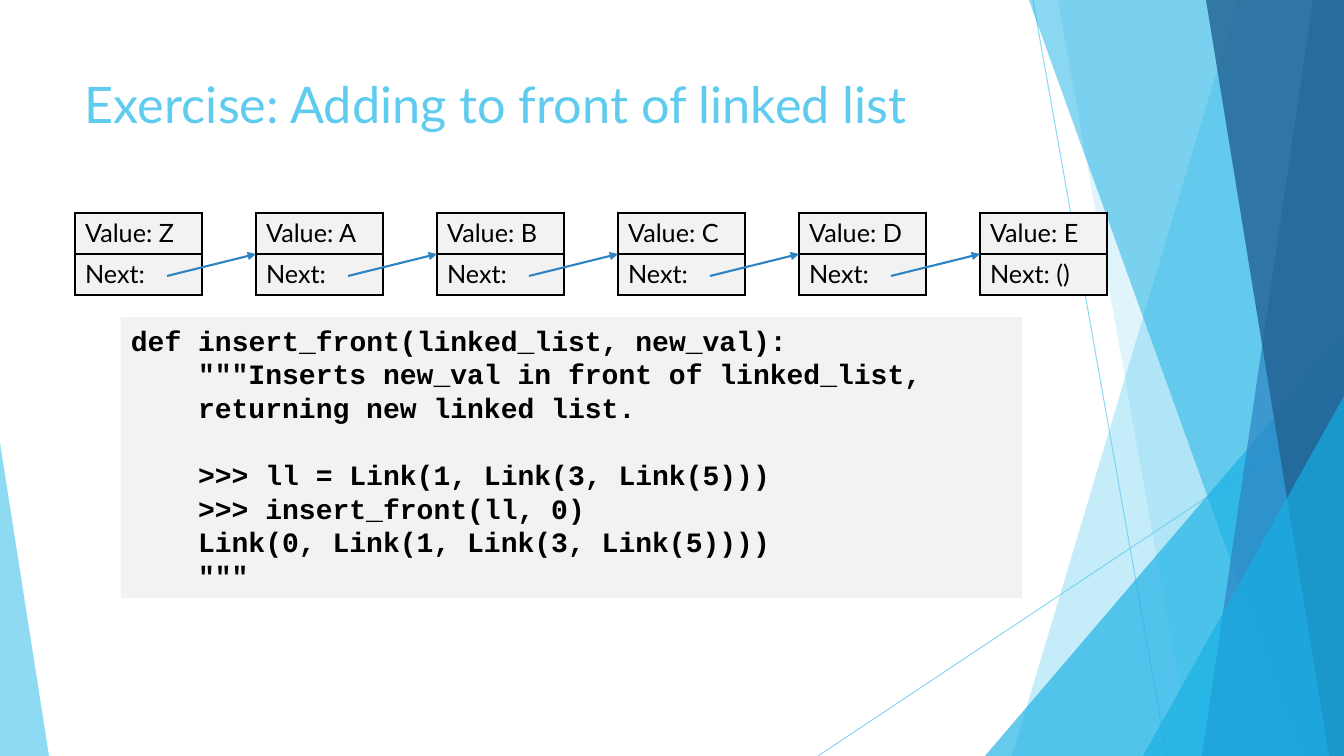
from lxml.etree import SubElement
from pptx import Presentation
from pptx.dml.color import RGBColor
from pptx.enum.shapes import MSO_CONNECTOR, MSO_SHAPE
from pptx.enum.text import MSO_ANCHOR, PP_ALIGN
from pptx.oxml.ns import qn
from pptx.util import Pt

WIDE, HIGH = 1344, 756
SCALE = 12192000 / WIDE
SKY, CYAN, BLUE, NAVY = "5FCBEF", "17B0E4", "2E83C3", "226292"
GRAY, BLACK = "F2F2F2", "000000"

NODES = "ZABCDE"
LEFT, TOP, STEP = 75, 213, 181
CELL_W, CELL_H = 127, 41

# Code lines: text, indented, gap before in points
CODE = [
    ("def insert_front(linked_list, new_val):", False, 0),
    ('"""Inserts new_val in front of linked_list,', True, 0),
    ("returning new linked list.", True, 0),
    (">>> ll = Link(1, Link(3, Link(5)))", True, 24),
    (">>> insert_front(ll, 0)", True, 0),
    ("Link(0, Link(1, Link(3, Link(5))))", True, 0),
    ('"""', True, 0),
]


def px(*sizes):
    """Turn pixel lengths into EMU."""
    return [round(size * SCALE) for size in sizes]


def paint(part, color):
    """Give a fill or a font one solid colour."""
    if hasattr(part, "solid"):
        part.solid()
        part = part.fore_color
    else:
        part = part.color
    part.rgb = RGBColor.from_string(color)


def fade(props, alpha):
    """Set the opacity, in percent, of the first colour in props."""
    color = next(props.iter(qn("a:srgbClr")))
    SubElement(color, qn("a:alpha"), val=str(alpha * 1000))


def style(para, name, size, color, bold=False):
    font = para.font
    font.name, font.size, font.bold = name, Pt(size), bold
    paint(font, color)


def finish(shape, color, alpha=100):
    """Leave a shape with a plain fill, no line and no shadow."""
    shape.shadow.inherit = False
    shape.line.fill.background()
    paint(shape.fill, color)
    if alpha < 100:
        fade(shape._element.spPr, alpha)


def line(shapes, start, end, color, width, alpha=100, arrow=False):
    link = shapes.add_connector(MSO_CONNECTOR.STRAIGHT, *px(*start, *end))
    link.line.width = Pt(width)
    paint(link.line.fill, color)
    props = link._element.spPr
    if alpha < 100:
        fade(props, alpha)
    if arrow:
        SubElement(props.find(qn("a:ln")), qn("a:tailEnd"), type="triangle")
    SubElement(props, qn("a:effectLst"))


def band(shapes, top, base, color, alpha):
    """Fill from a slanted edge (top x, base x) to the right of the slide."""
    pen = shapes.build_freeform(top, 0, scale=SCALE)
    pen.add_line_segments([(WIDE, 0), (WIDE, HIGH), (base, HIGH)])
    finish(pen.convert_to_shape(), color, alpha)


def wedge(shapes, left, top, width, peak, color, alpha):
    """Stand a triangle on the foot of the slide; peak is 0 left, 1 right."""
    box = px(left, top, width, HIGH - top)
    shape = shapes.add_shape(MSO_SHAPE.ISOSCELES_TRIANGLE, *box)
    shape.adjustments[0] = peak
    finish(shape, color, alpha)


def decor(shapes):
    line(shapes, (1033, 0), (1167, HIGH), SKY, 0.75, 70)
    line(shapes, (WIDE, 406), (818, HIGH), SKY, 0.75, 70)
    band(shapes, 1238, 1012, SKY, 36)
    band(shapes, 1058, 1192, SKY, 20)
    wedge(shapes, 985, 336, 359, 1, CYAN, 66)
    band(shapes, 1029, 1301, CYAN, 50)
    band(shapes, 1313, 1202, BLUE, 70)
    band(shapes, 1206, 1329, NAVY, 80)
    wedge(shapes, 1143, 396, 201, 1, CYAN, 66)
    wedge(shapes, 0, 443, 49, 0, SKY, 70)


def title(shapes, text):
    frame = shapes.add_textbox(*px(75, 68, 948, 145)).text_frame
    frame.word_wrap = True
    para = frame.paragraphs[0]
    para.text = text
    style(para, "Lato", 36, SKY)


def border(cell):
    """Draw all four sides of a cell, ahead of its fill."""
    props = cell._tc.get_or_add_tcPr()
    for side in ("a:lnL", "a:lnR", "a:lnT", "a:lnB"):
        edge = SubElement(props, qn(side), w=str(Pt(1.5)))
        fill = SubElement(edge, qn("a:solidFill"))
        SubElement(fill, qn("a:srgbClr"), val=BLACK)


def node(shapes, left, texts):
    box = px(left, TOP, CELL_W, CELL_H * len(texts))
    table = shapes.add_table(len(texts), 1, *box).table
    table.first_row = table.horz_banding = False
    for row, text in enumerate(texts):
        table.rows[row].height = px(CELL_H)[0]
        cell = table.cell(row, 0)
        border(cell)
        paint(cell.fill, GRAY)
        cell.text = text
        style(cell.text_frame.paragraphs[0], "Lato", 18, BLACK)


def chain(shapes):
    """Draw the linked list and its arrows."""
    lefts = [LEFT + STEP * i for i in range(len(NODES))]
    for left, name in zip(lefts, NODES):
        tail = "Next: ()" if name == NODES[-1] else "Next:"
        node(shapes, left, (f"Value: {name}", tail))
    for left, goal in zip(lefts, lefts[1:]):
        start = left + 92, TOP + 63
        line(shapes, start, (goal, TOP + CELL_H), BLUE, 1.5, arrow=True)


def code(shapes):
    shape = shapes.add_shape(MSO_SHAPE.RECTANGLE, *px(121, 317, 901, 281))
    finish(shape, GRAY)
    frame = shape.text_frame
    frame.word_wrap = True
    frame.vertical_anchor = MSO_ANCHOR.MIDDLE
    for i, (text, inner, gap) in enumerate(CODE):
        para = frame.add_paragraph() if i else frame.paragraphs[0]
        para.text = text
        para.alignment = PP_ALIGN.LEFT
        para.line_spacing = Pt(24)
        para.space_before = Pt(gap)
        if inner:
            para._p.get_or_add_pPr().set("marL", str(Pt(48)))
        style(para, "Courier New", 20, BLACK, True)


def main():
    deck = Presentation()
    deck.slide_width, deck.slide_height = px(WIDE, HIGH)
    shapes = deck.slides.add_slide(deck.slide_layouts[6]).shapes
    decor(shapes)
    title(shapes, "Exercise: Adding to front of linked list")
    chain(shapes)
    code(shapes)
    deck.save("out.pptx")


if __name__ == "__main__":
    main()
